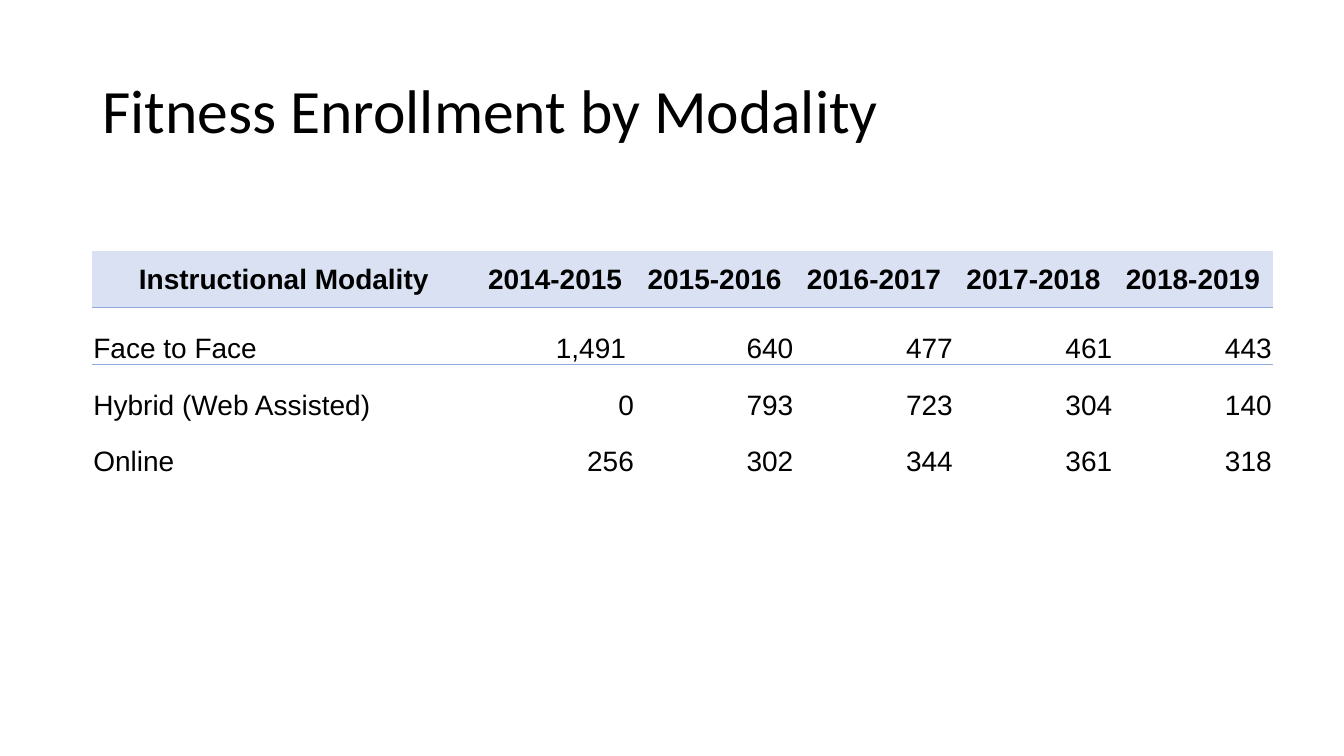
from dataclasses import dataclass

from lxml import etree
from pptx import Presentation
from pptx.dml.color import RGBColor
from pptx.enum.text import MSO_ANCHOR, MSO_AUTO_SIZE, PP_ALIGN
from pptx.oxml.ns import qn
from pptx.util import Pt

LEFT, CENTER, RIGHT = PP_ALIGN.LEFT, PP_ALIGN.CENTER, PP_ALIGN.RIGHT
MIDDLE, BOTTOM = MSO_ANCHOR.MIDDLE, MSO_ANCHOR.BOTTOM
TITLE_ONLY = 5
NO_STYLE = "{2D5ABB26-0587-4C30-8999-92F81FD0307C}"


@dataclass(frozen=True)
class Theme:
    text: str = "000000"
    header_fill: str = "D9E1F2"
    rule: str = "8EA9DB"
    title_font: str = "Calibri"
    table_font: str = "Arial"
    title_size: int = 44
    table_size: int = 20


THEME = Theme()

HEADER = ["Instructional Modality", "2014-2015", "2015-2016", "2016-2017",
          "2017-2018", "2018-2019"]
ENROLLMENT = [
    ["Face to Face", "1,491", "640", "477", "461", "443"],
    ["Hybrid (Web Assisted)", "0", "793", "723", "304", "140"],
    ["Online", "256", "302", "344", "361", "318"],
]


def style_paragraph(p, font, size, align, bold=False):
    p.alignment = align
    p.font.name = font
    p.font.size = Pt(size)
    p.font.bold = bold
    p.font.color.rgb = RGBColor.from_string(THEME.text)


def add_rule(cell, edge):
    """Draw a thin line on one edge of a cell: lnT or lnB."""
    ln = etree.Element(qn(f"a:{edge}"), w=str(Pt(0.5)))
    fill = etree.SubElement(ln, qn("a:solidFill"))
    etree.SubElement(fill, qn("a:srgbClr"), val=THEME.rule)
    cell._tc.get_or_add_tcPr().insert(0, ln)


def fill_title(slide, text, left, top, width, height):
    sp = slide.shapes.title
    sp.left, sp.top, sp.width, sp.height = Pt(left), Pt(top), Pt(width), Pt(height)
    tf = sp.text_frame
    tf.text = text
    tf.word_wrap = True
    tf.auto_size = MSO_AUTO_SIZE.NONE
    tf.vertical_anchor = MIDDLE
    p = tf.paragraphs[0]
    p.line_spacing = 0.9
    style_paragraph(p, THEME.title_font, THEME.title_size, LEFT)


def fill_cell(cell, text, row, col):
    is_header = row == 0
    cell.text = text
    cell.margin_left = cell.margin_right = cell.margin_top = Pt(0.7)
    cell.margin_bottom = 0
    cell.vertical_anchor = MIDDLE if is_header else BOTTOM
    align = CENTER if is_header else RIGHT if col else LEFT
    style_paragraph(cell.text_frame.paragraphs[0], THEME.table_font,
                    THEME.table_size, align, is_header)
    if is_header:
        cell.fill.solid()
        cell.fill.fore_color.rgb = RGBColor.from_string(THEME.header_fill)
        add_rule(cell, "lnB")
    else:
        cell.fill.background()
    if row == 1:
        add_rule(cell, "lnT")


def add_enrollment_table(slide, left, top, width, height):
    rows = [HEADER] + ENROLLMENT
    table = slide.shapes.add_table(len(rows), len(HEADER), Pt(left), Pt(top),
                                   Pt(width), Pt(height)).table
    table.first_row = table.horz_banding = False
    table._tbl.tblPr.find(qn("a:tableStyleId")).text = NO_STYLE

    label_width = 273.6
    year_width = (width - label_width) / (len(HEADER) - 1)
    for i, column in enumerate(table.columns):
        column.width = Pt(year_width if i else label_width)
    for r, values in enumerate(rows):
        table.rows[r].height = Pt(height / len(rows))
        for c, value in enumerate(values):
            fill_cell(table.cell(r, c), value, r, c)
    table.cell(1, 1).margin_right = Pt(6.3)


def main():
    prs = Presentation()
    prs.slide_width, prs.slide_height = Pt(960), Pt(540)
    slide = prs.slides.add_slide(prs.slide_layouts[TITLE_ONLY])
    fill_title(slide, "Fitness Enrollment by Modality", 66, 28.75, 828, 104.4)
    add_enrollment_table(slide, 66, 179.3, 843.1, 162)
    prs.save("out.pptx")


if __name__ == "__main__":
    main()
